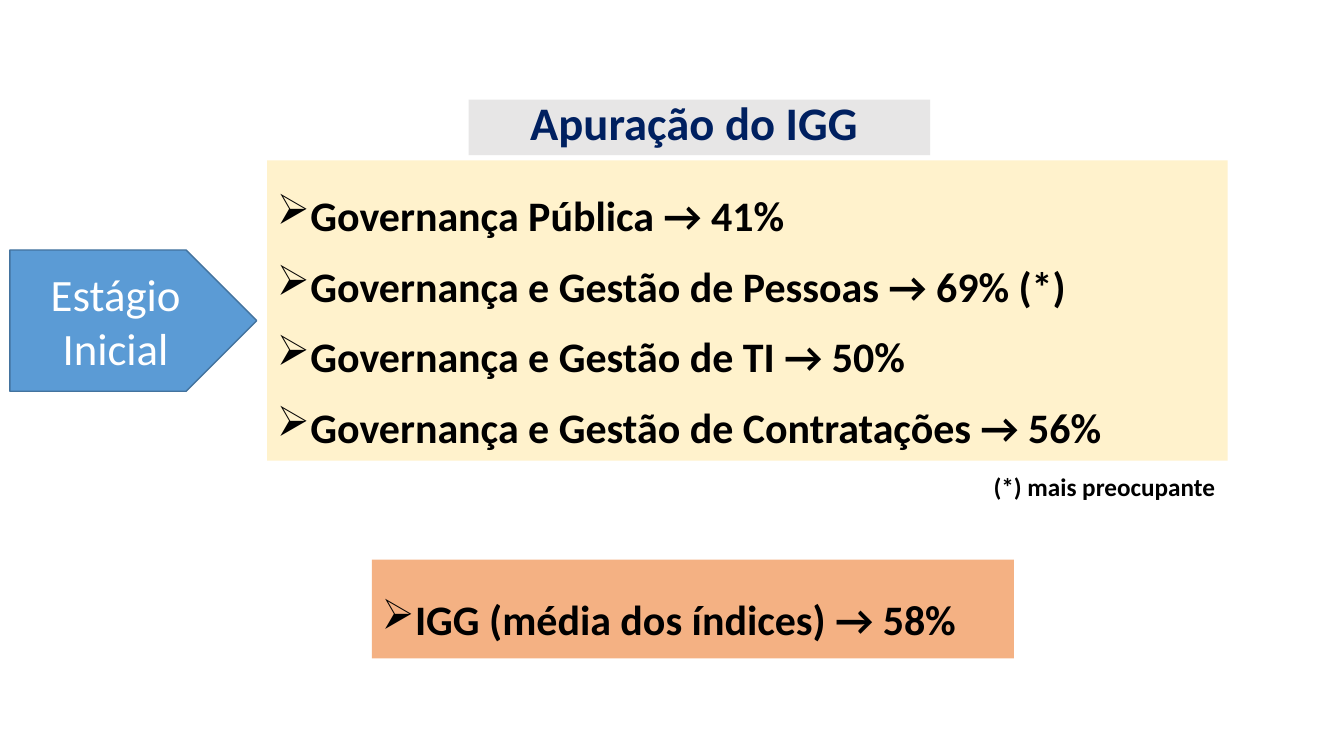
from dataclasses import dataclass

from lxml import etree
from pptx import Presentation
from pptx.dml.color import RGBColor
from pptx.enum.shapes import MSO_SHAPE
from pptx.enum.text import MSO_ANCHOR, MSO_AUTO_SIZE, PP_ALIGN
from pptx.oxml.ns import qn
from pptx.util import Cm, Pt

RECTANGLE, PENTAGON = MSO_SHAPE.RECTANGLE, MSO_SHAPE.PENTAGON
MIDDLE = MSO_ANCHOR.MIDDLE
NO_FIT, GROW = MSO_AUTO_SIZE.NONE, MSO_AUTO_SIZE.SHAPE_TO_FIT_TEXT
LEFT, CENTER, JUSTIFY = PP_ALIGN.LEFT, PP_ALIGN.CENTER, PP_ALIGN.JUSTIFY
TITLE_ONLY = 5


@dataclass(frozen=True)
class Theme:
    font: str = "Calibri"
    ink: str = "000000"
    title_ink: str = "002060"
    title_fill: str = "E7E6E6"
    index_fill: str = "FFF2CC"
    average_fill: str = "F4B183"
    stage_ink: str = "FFFFFF"
    stage_fill: str = "5B9BD5"
    stage_line: str = "43739E"
    title_size: float = 33.3
    stage_size: float = 32
    item_size: float = 30
    note_size: float = 18


THEME = Theme()


def fill_with(shape, color):
    shape.fill.solid()
    shape.fill.fore_color.rgb = RGBColor.from_string(color)


def add_run(paragraph, text, size, color, bold=True):
    run = paragraph.add_run()
    run.text = text
    run.font.name = THEME.font
    run.font.size = Pt(size)
    run.font.bold = bold
    run.font.color.rgb = RGBColor.from_string(color)


def add_bullet(paragraph):
    hanging = Cm(0.8)
    properties = paragraph._p.get_or_add_pPr()
    properties.set("marL", str(hanging))
    properties.set("indent", str(-hanging))
    etree.SubElement(properties, qn("a:buChar")).set("char", "➢")


def add_block(slide, kind, box, fill):
    block = slide.shapes.add_shape(kind, *map(Cm, box))
    block.shadow.inherit = False
    fill_with(block, fill)
    block.line.fill.background()
    block.text_frame.word_wrap = True
    block.text_frame.vertical_anchor = MIDDLE
    return block


def add_bullet_panel(slide, box, fill, items):
    frame = add_block(slide, RECTANGLE, box, fill).text_frame
    for number, item in enumerate(items):
        paragraph = frame.add_paragraph() if number else frame.paragraphs[0]
        add_bullet(paragraph)
        paragraph.alignment = JUSTIFY
        paragraph.line_spacing = 1.4
        add_run(paragraph, item, THEME.item_size, THEME.ink)


def set_title(slide, box, text):
    title = slide.shapes.title
    title.left, title.top, title.width, title.height = map(Cm, box)
    fill_with(title, THEME.title_fill)
    frame = title.text_frame
    frame.auto_size = NO_FIT
    frame.vertical_anchor = MIDDLE
    heading = frame.paragraphs[0]
    heading.alignment = CENTER
    heading.line_spacing = 0.8
    add_run(heading, text, THEME.title_size, THEME.title_ink)


def add_stage_arrow(slide, box, text):
    stage = add_block(slide, PENTAGON, box, THEME.stage_fill)
    stage.line.color.rgb = RGBColor.from_string(THEME.stage_line)
    stage.line.width = Pt(1)
    label = stage.text_frame.paragraphs[0]
    label.alignment = CENTER
    add_run(label, text, THEME.stage_size, THEME.stage_ink, bold=False)


def add_note(slide, box, text):
    frame = slide.shapes.add_textbox(*map(Cm, box)).text_frame
    frame.word_wrap = False
    frame.auto_size = GROW
    note = frame.paragraphs[0]
    note.alignment = LEFT
    add_run(note, text, THEME.note_size, THEME.ink)


def main():
    deck = Presentation()
    deck.slide_width, deck.slide_height = Cm(33.87), Cm(19.05)
    slide = deck.slides.add_slide(deck.slide_layouts[TITLE_ONLY])

    # Heading
    set_title(slide, (11.81, 2.51, 11.63, 1.4), "Apuração do IGG ")

    # Indices and their maturity stage
    add_bullet_panel(slide, (6.73, 4.04, 24.21, 7.57), THEME.index_fill, [
        "Governança Pública → 41%",
        "Governança e Gestão de Pessoas → 69% (*)",
        "Governança e Gestão de TI → 50%",
        "Governança e Gestão de Contratações → 56%",
    ])
    add_stage_arrow(slide, (0.25, 6.3, 6.22, 3.56), "Estágio Inicial")
    add_note(slide, (24.79, 11.76, 6.15, 1.8), "(*) mais preocupante")

    # Overall average
    add_bullet_panel(slide, (9.37, 14.1, 16.18, 2.49), THEME.average_fill,
                     ["IGG (média dos índices) → 58%"])

    deck.save("out.pptx")


if __name__ == "__main__":
    main()
